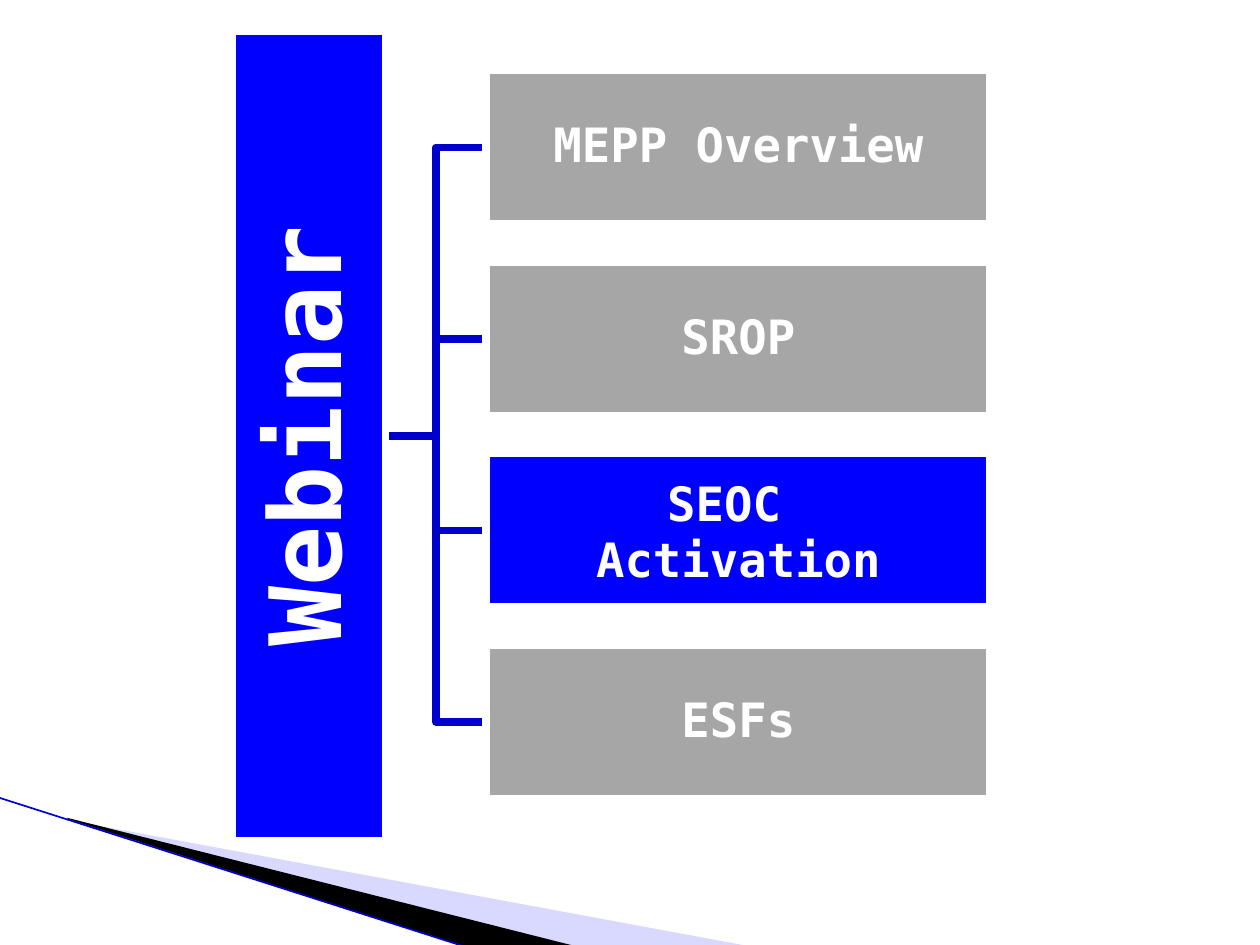
from pptx import Presentation
from pptx.dml.color import RGBColor
from pptx.enum.shapes import MSO_CONNECTOR, MSO_SHAPE
from pptx.enum.text import MSO_ANCHOR, PP_ALIGN
from pptx.oxml.ns import qn
from pptx.util import Inches, Pt
from lxml.etree import SubElement

COLORS = {"blue": "0000FF", "branch": "0000CC", "gray": "A6A6A6",
          "white": "FFFFFF", "black": "000000", "lavender": "A2A2FF"}
FONT = "DejaVu Sans Mono"
OUTLINE = 4.33
BOX_HEIGHT = 1.22
TOPIC_LEFT, TOPIC_TOP, TOPIC_WIDTH, TOPIC_PITCH = 3.86, 0.56, 4, 1.52
ROOT_CENTER_X, ROOT_CENTER_Y, ROOT_LENGTH = 2.45, 3.46, 6.42
TOPICS = [(["MEPP Overview"], "gray"), (["SROP"], "gray"),
          (["SEOC ", "Activation"], "blue"), (["ESFs"], "gray")]


def rgb(name):
    return RGBColor.from_string(COLORS[name])


def set_line(line, color, width):
    line.color.rgb = rgb(color)
    line.width = Pt(width)


def add_path(page, points, close):
    start, *rest = [(Inches(x), Inches(y)) for x, y in points]
    builder = page.shapes.build_freeform(*start)
    builder.add_line_segments(rest, close=close)
    shape = builder.convert_to_shape()
    shape.shadow.inherit = False
    return shape


def add_wedge(page, points, color, opacity=100):
    wedge = add_path(page, points, close=True)
    wedge.fill.solid()
    wedge.fill.fore_color.rgb = rgb(color)
    wedge.line.fill.background()
    if opacity < 100:
        fill_color = wedge.fill._xPr.find(qn("a:solidFill"))[0]
        SubElement(fill_color, qn("a:alpha"), val=str(opacity * 1000))


def add_edge_line(page):
    edge = page.shapes.add_connector(MSO_CONNECTOR.STRAIGHT, Inches(-0.01), Inches(6.33),
                                     Inches(3.71), Inches(7.52))
    set_line(edge.line, "branch", 0.95)
    SubElement(edge._element.spPr, qn("a:effectLst"))


def add_branch(page, end_y):
    """Elbow from the root box to the middle of a topic's left side."""
    start_x, bend_x = ROOT_CENTER_X + BOX_HEIGHT / 2, 3.46
    branch = add_path(page, [(start_x, ROOT_CENTER_Y), (bend_x, ROOT_CENTER_Y),
                             (bend_x, end_y), (TOPIC_LEFT, end_y)], close=False)
    branch.fill.background()
    set_line(branch.line, "branch", OUTLINE)


def add_box(page, left, top, width, lines, color, size, inset):
    box = page.shapes.add_shape(MSO_SHAPE.RECTANGLE, Inches(left), Inches(top),
                                Inches(width), Inches(BOX_HEIGHT))
    box.shadow.inherit = False
    box.fill.solid()
    box.fill.fore_color.rgb = rgb(color)
    set_line(box.line, "white", OUTLINE)
    frame = box.text_frame
    frame.word_wrap = True
    frame.vertical_anchor = MSO_ANCHOR.MIDDLE
    for side in ("left", "top", "right", "bottom"):
        setattr(frame, f"margin_{side}", Inches(inset))
    for index, text in enumerate(lines):
        para = frame.add_paragraph() if index else frame.paragraphs[0]
        para.alignment = PP_ALIGN.CENTER
        para.line_spacing = 0.9 if len(lines) == 1 else 1.0
        span = para.add_run()
        span.text = text
        for name, value in {"name": FONT, "size": Pt(size), "bold": True}.items():
            setattr(span.font, name, value)
        span.font.color.rgb = rgb("white")
    return box


def main():
    deck = Presentation()
    deck.slide_width, deck.slide_height = Inches(10), Inches(7.5)
    page = deck.slides.add_slide(deck.slide_layouts[6])

    add_wedge(page, [(0.55, 6.51), (5.95, 7.51), (4.56, 7.51), (0.55, 6.5)], "lavender", 40)
    add_wedge(page, [(0.53, 6.49), (4.57, 7.51), (3.72, 7.52), (0.54, 6.5)], "black")
    add_edge_line(page)

    tops = [TOPIC_TOP + row * TOPIC_PITCH for row in range(len(TOPICS))]
    for top in reversed(tops):
        add_branch(page, top + BOX_HEIGHT / 2)
    root = add_box(page, ROOT_CENTER_X - ROOT_LENGTH / 2, ROOT_CENTER_Y - BOX_HEIGHT / 2,
                   ROOT_LENGTH, ["Webinar"], "blue", 57, 0.04)
    root.rotation = 270
    for top, (lines, color) in zip(tops, TOPICS):
        add_box(page, TOPIC_LEFT, top, TOPIC_WIDTH, lines, color, 27, 0.02)

    deck.save("out.pptx")


if __name__ == "__main__":
    main()
